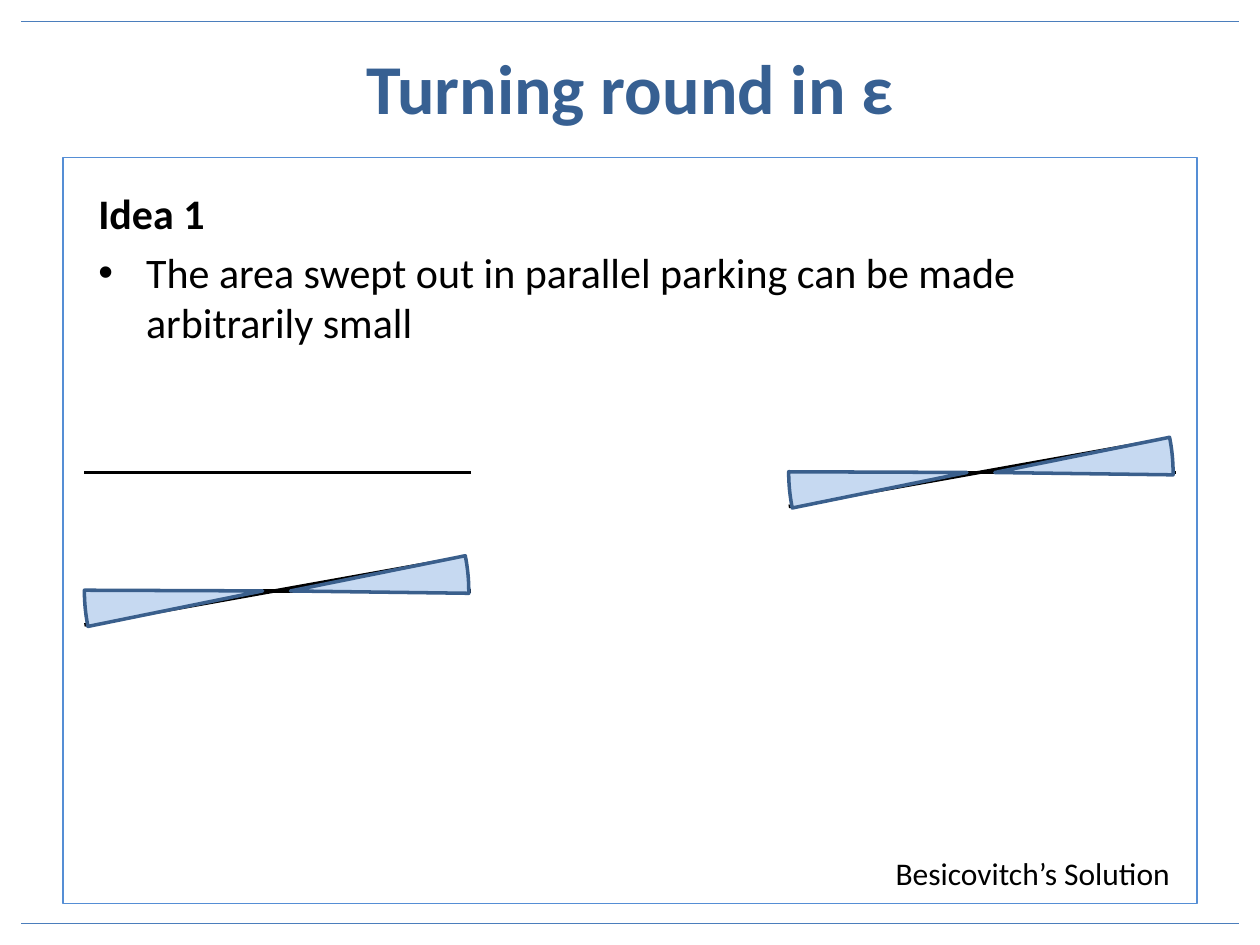
from lxml import etree
from pptx import Presentation
from pptx.dml.color import RGBColor
from pptx.enum.shapes import MSO_CONNECTOR, MSO_SHAPE
from pptx.enum.text import MSO_ANCHOR, PP_ALIGN
from pptx.oxml.ns import qn
from pptx.util import Inches, Pt

STRAIGHT = MSO_CONNECTOR.STRAIGHT
PIE = MSO_SHAPE.PIE
MIDDLE, TOP = MSO_ANCHOR.MIDDLE, MSO_ANCHOR.TOP
CENTER, LEFT = PP_ALIGN.CENTER, PP_ALIGN.LEFT

BLACK = RGBColor(0x00, 0x00, 0x00)
TITLE_BLUE = RGBColor(0x37, 0x60, 0x92)
RULE_BLUE = RGBColor(0x4B, 0x7E, 0xBC)
FRAME_BLUE = RGBColor(0x55, 0x8E, 0xD5)
WEDGE_FILL = RGBColor(0xC6, 0xD9, 0xF1)
WEDGE_LINE = RGBColor(0x3A, 0x5F, 0x8C)
FONT = "Calibri"

TITLE = "Turning round in ε"
# text, bold, bullet
BODY = [
    ("Idea 1", True, None),
    ("The area swept out in parallel parking can be made arbitrarily small", False, "•"),
]
CAPTION = "Besicovitch’s Solution"

RULE_HEIGHTS = (0.17, 7.33)
NEEDLE_LENGTH = 3.07
TILT_WIDTH, TILT_RISE = 3.02, 0.27
PIE_SIZE = 2.83
# offset from the needle's left end, rotation, start and end angle (degrees)
WEDGES = [(0, 0, 168.5, 180.22), (0.22, 180, 168.6, 180.74)]
START = (0.67, 3.75)
SWEEPS = [(6.26, 3.75), (0.67, 4.69)]


def place(shape, left, top, width, height):
    shape.left, shape.top = Inches(left), Inches(top)
    shape.width, shape.height = Inches(width), Inches(height)


def add_text(para, text, size, color, bold=False):
    span = para.add_run()
    span.text = text
    font = span.font
    font.name, font.size, font.bold = FONT, Pt(size), bold
    font.color.rgb = color


def set_bullet(para, bullet):
    properties = para._p.get_or_add_pPr()
    indent = Inches(0.38) if bullet else 0
    properties.set("marL", str(indent))
    properties.set("indent", str(-indent))
    if bullet:
        etree.SubElement(properties, qn("a:buChar")).set("char", bullet)
    else:
        etree.SubElement(properties, qn("a:buNone"))


def add_line(shapes, start, end, color=BLACK, width=2):
    line = shapes.add_connector(STRAIGHT, *map(Inches, (*start, *end)))
    line.line.color.rgb = color
    line.line.width = Pt(width)
    etree.SubElement(line._element.spPr, qn("a:effectLst"))


def add_needle(shapes, left, middle):
    add_line(shapes, (left + NEEDLE_LENGTH, middle), (left, middle))


def add_sweep(page, left, middle):
    """Group a level needle, a tilted needle and the two wedges between them."""
    shapes = page.shapes.add_group_shape().shapes
    add_needle(shapes, left, middle)
    add_line(shapes, (left + TILT_WIDTH, middle - TILT_RISE), (left, middle + TILT_RISE))
    for offset, rotation, *angles in WEDGES:
        wedge = shapes.add_shape(PIE, *map(Inches, (
            left + offset, middle - PIE_SIZE / 2, PIE_SIZE, PIE_SIZE)))
        for index, angle in enumerate(angles):
            wedge.adjustments[index] = angle * 0.6
        wedge.rotation = rotation
        wedge.shadow.inherit = False
        wedge.fill.solid()
        wedge.fill.fore_color.rgb = WEDGE_FILL
        wedge.line.color.rgb = WEDGE_LINE
        wedge.line.width = Pt(2)


def main():
    deck = Presentation()
    deck.slide_width, deck.slide_height = Inches(10), Inches(7.5)
    page = deck.slides.add_slide(deck.slide_layouts[1])

    title = page.shapes.title
    place(title, 0.5, 0.25, 9, 0.87)
    title.text_frame.vertical_anchor = MIDDLE
    para = title.text_frame.paragraphs[0]
    para.alignment = CENTER
    add_text(para, TITLE, 40, TITLE_BLUE, bold=True)

    body = page.placeholders[1]
    place(body, 0.5, 1.25, 9, 5.92)
    body.line.color.rgb = FRAME_BLUE
    body.line.width = Pt(0.75)
    frame = body.text_frame
    frame.vertical_anchor = TOP
    frame.margin_left, frame.margin_top = Inches(0.28), Inches(0.24)
    for index, (text, bold, bullet) in enumerate(BODY):
        para = frame.add_paragraph() if index else frame.paragraphs[0]
        para.alignment = LEFT
        set_bullet(para, bullet)
        add_text(para, text, 24, BLACK, bold)

    for height in RULE_HEIGHTS:
        add_line(page.shapes, (0.17, height), (9.83, height), RULE_BLUE, 0.75)

    add_needle(page.shapes, *START)
    for left, middle in SWEEPS:
        add_sweep(page, left, middle)

    caption = page.shapes.add_textbox(*map(Inches, (7.01, 6.73, 2.4, 0.4)))
    caption.text_frame.word_wrap = False
    add_text(caption.text_frame.paragraphs[0], CAPTION, 18, BLACK)

    deck.save("out.pptx")


if __name__ == "__main__":
    main()
